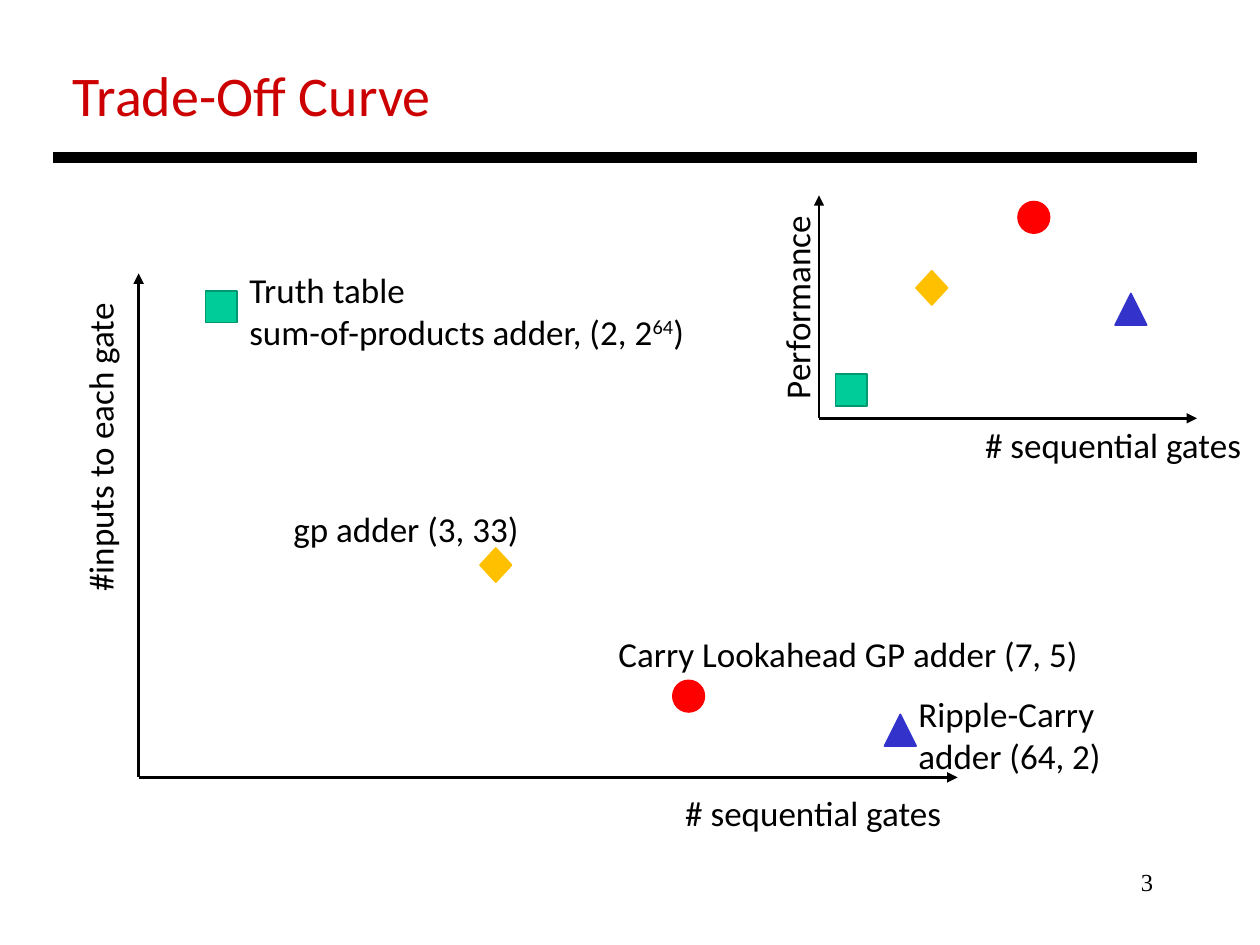
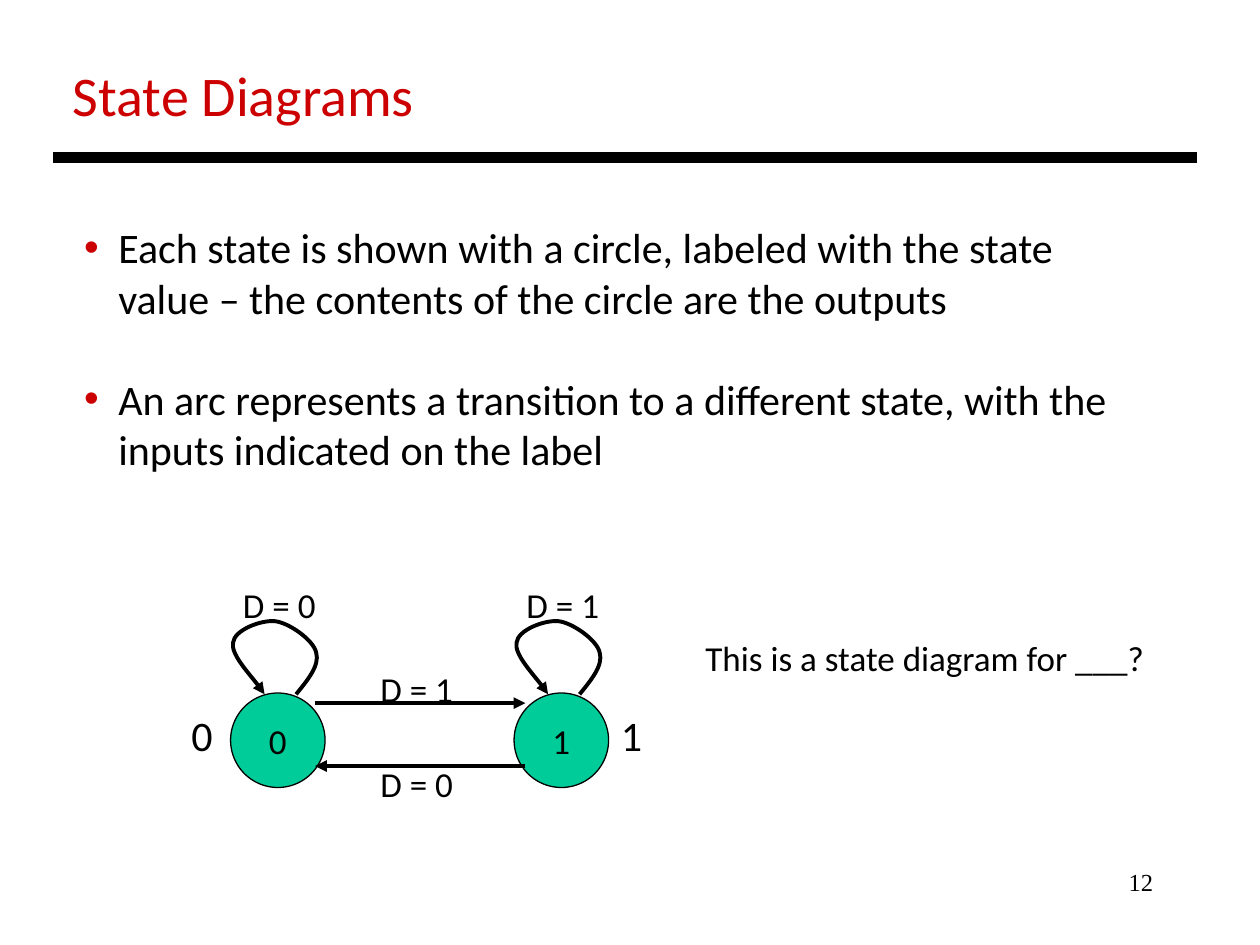
from lxml.etree import SubElement
from pptx import Presentation
from pptx.dml.color import RGBColor
from pptx.enum.shapes import MSO_CONNECTOR, MSO_SHAPE
from pptx.enum.text import MSO_ANCHOR, MSO_AUTO_SIZE, PP_ALIGN
from pptx.oxml.ns import qn
from pptx.util import Inches, Pt

BLACK, TITLE_RED, GREEN = "000000", "CC0000", "00CC99"
BODY_FONT, NUMBER_FONT = "Calibri", "Times New Roman"

# kind: preset shape, height, fill, line
MARKERS = {
    "truth table": (MSO_SHAPE.RECTANGLE, 0.25, GREEN, "009771"),
    "gp": (MSO_SHAPE.DIAMOND, 0.27, "FFC000", "FFC000"),
    "lookahead": (MSO_SHAPE.OVAL, 0.25, "FF0000", "FF0000"),
    "ripple": (MSO_SHAPE.ISOSCELES_TRIANGLE, 0.25, "3333CC", "3333CC"),
}

# Start point, then three points for each curve, from the state's top left corner
LOOP = [(0.52, 0.01),
        (0.61, -0.1), (0.71, -0.22), (0.68, -0.32),
        (0.66, -0.42), (0.46, -0.56), (0.35, -0.57),
        (0.24, -0.58), (0.03, -0.5), (0.02, -0.4),
        (0, -0.31), (0.23, -0.06), (0.27, 0.01)]


def color(hex_string):
    return RGBColor.from_string(hex_string)


class Deck:
    def __init__(self):
        self.prs = Presentation()
        self.prs.slide_width, self.prs.slide_height = Inches(10), Inches(7.5)
        self.slide = None

    def new_slide(self, title, number):
        self.slide = self.prs.slides.add_slide(self.prs.slide_layouts[6])
        self.text(0.48, 0.43, 3.08, 0.64, title, 32, TITLE_RED)
        self.line(0.42, 1.25, 9.5, 1.25, 6, arrow=False)
        sp = self.text(7.17, 6.83, 2.08, 0.5, str(number), 14,
                       font=NUMBER_FONT, wrap=True)
        sp.text_frame.paragraphs[0].alignment = PP_ALIGN.RIGHT

    def style(self, r, size, fill=BLACK, font=BODY_FONT):
        r.font.size, r.font.name = Pt(size), font
        r.font.color.rgb = color(fill)

    def text(self, x, y, w, h, text, size=20, fill=BLACK, font=BODY_FONT,
             wrap=False, rotation=0):
        sp = self.slide.shapes.add_textbox(Inches(x), Inches(y), Inches(w), Inches(h))
        sp.rotation = rotation
        tf = sp.text_frame
        tf.text = text
        tf.word_wrap = wrap
        if not wrap:
            tf.auto_size = MSO_AUTO_SIZE.SHAPE_TO_FIT_TEXT
        for p in tf.paragraphs:
            for r in p.runs:
                self.style(r, size, fill, font)
        return sp

    def add_power(self, sp, exponent, rest):
        """Append a raised exponent and the text after it to the last paragraph."""
        p = sp.text_frame.paragraphs[-1]
        for text, baseline in ((exponent, 30000), (rest, 0)):
            r = p.add_run()
            r.text = text
            self.style(r, 20)
            r.font._element.set("baseline", str(baseline))

    def bullets(self, x, y, w, h, items, size=24, gap=29):
        sp = self.text(x, y, w, h, "\n".join(items), size, wrap=True)
        for p in sp.text_frame.paragraphs:
            p.space_after = Pt(gap)
            pPr = p._p.get_or_add_pPr()
            indent = Inches(0.27)
            pPr.set("marL", str(indent))
            pPr.set("indent", str(-indent))
            clr = SubElement(pPr, qn("a:buClr"))
            SubElement(clr, qn("a:srgbClr"), val=TITLE_RED)
            SubElement(pPr, qn("a:buFont"), typeface="Arial")
            SubElement(pPr, qn("a:buChar"), char="•")

    def shape(self, kind, x, y, w, h, fill, line, weight):
        sp = self.slide.shapes.add_shape(kind, Inches(x), Inches(y), Inches(w), Inches(h))
        sp.shadow.inherit = False
        sp.fill.solid()
        sp.fill.fore_color.rgb = color(fill)
        sp.line.color.rgb = color(line)
        sp.line.width = Pt(weight)
        return sp

    def marker(self, kind, x, y):
        preset, height, fill, line = MARKERS[kind]
        self.shape(preset, x, y, 0.25, height, fill, line, 1)

    def stroke(self, sp, weight, arrow=True):
        sp.line.color.rgb = color(BLACK)
        sp.line.width = Pt(weight)
        if arrow:
            SubElement(sp.line._get_or_add_ln(), qn("a:tailEnd"), type="triangle")

    def line(self, x1, y1, x2, y2, weight, arrow=True):
        sp = self.slide.shapes.add_connector(
            MSO_CONNECTOR.STRAIGHT, Inches(x1), Inches(y1), Inches(x2), Inches(y2))
        self.stroke(sp, weight, arrow)
        SubElement(sp._element.spPr, qn("a:effectLst"))

    def axes(self, x, y, right, top):
        self.line(x, y, right, y, 1.5)
        self.line(x, y, x, top, 1.5)

    def loop(self, x, y):
        """Draw the curved arrow from a state back to itself."""
        points = [(Inches(x + dx), Inches(y + dy)) for dx, dy in LOOP]
        builder = self.slide.shapes.build_freeform(*points[0])
        builder.add_line_segments(points[1:], close=False)
        sp = builder.convert_to_shape()
        sp.shadow.inherit = False
        sp.fill.background()
        self.stroke(sp, 2.25)
        # Turn every three straight segments into one cubic curve
        segments = sp._element.xpath(".//a:lnTo")
        for i in range(0, len(segments), 3):
            curve = SubElement(segments[i].getparent(), qn("a:cubicBezTo"))
            for segment in segments[i:i + 3]:
                curve.append(segment[0])
                segment.getparent().remove(segment)

    def state(self, x, y, value, loop_label, name_x):
        sp = self.shape(MSO_SHAPE.OVAL, x, y, 0.75, 0.75, GREEN, BLACK, 0.75)
        tf = sp.text_frame
        tf.text = value
        tf.word_wrap = False
        tf.vertical_anchor = MSO_ANCHOR.MIDDLE
        p = tf.paragraphs[0]
        p.alignment = PP_ALIGN.CENTER
        self.style(p.runs[0], 20)
        self.text(name_x, y + 0.08, 0.37, 0.5, value, 24)
        self.loop(x, y)
        self.text(x, y - 0.92, 0.78, 0.44, loop_label)


def trade_off_curve(deck):
    deck.new_slide("Trade-Off Curve", 3)

    deck.axes(1.1, 6.17, 7.6, 2.17)
    deck.text(-0.46, 3.32, 2.51, 0.44, "#inputs to each gate", rotation=270)
    deck.text(5.34, 6.23, 2.26, 0.44, "# sequential gates")
    for kind, x, y in (("truth table", 1.63, 2.31), ("ripple", 7.02, 5.67),
                       ("lookahead", 5.34, 5.4), ("gp", 3.81, 4.35)):
        deck.marker(kind, x, y)
    sp = deck.text(1.88, 2.08, 3.71, 0.77, "Truth table\nsum-of-products adder, (2, 2")
    deck.add_power(sp, "64", ")")
    deck.text(2.23, 3.98, 2.01, 0.44, "gp adder (3, 33)")
    deck.text(4.81, 4.97, 3.88, 0.44, "Carry Lookahead GP adder (7, 5)")
    deck.text(7.19, 5.45, 1.66, 0.77, "Ripple-Carry\nadder (64, 2)")

    deck.axes(6.5, 3.32, 9.5, 1.55)
    deck.text(7.72, 3.31, 2.26, 0.44, "# sequential gates")
    deck.text(5.49, 2.21, 1.67, 0.44, "Performance", rotation=270)
    for kind, x, y in (("truth table", 6.63, 2.97), ("gp", 7.27, 2.15),
                       ("lookahead", 8.08, 1.6), ("ripple", 8.85, 2.33)):
        deck.marker(kind, x, y)


def state_diagrams(deck):
    deck.new_slide("State Diagrams", 12)
    deck.bullets(0.57, 1.71, 8.45, 2.12, [
        "Each state is shown with a circle, labeled with the state value"
        " – the contents of the circle are the outputs",
        "An arc represents a transition to a different state, with the"
        " inputs indicated on the label",
    ])
    deck.state(1.83, 5.5, "0", "D = 0", name_x=1.42)
    deck.state(4.08, 5.5, "1", "D = 1", name_x=4.83)
    deck.line(2.5, 5.58, 4.17, 5.58, 2.25)
    deck.line(4.17, 6.08, 2.5, 6.08, 2.25)
    deck.text(2.92, 5.25, 0.78, 0.44, "D = 1")
    deck.text(2.92, 6, 0.78, 0.44, "D = 0")
    deck.text(5.5, 5, 3.72, 0.44, "This is a state diagram for ___?")


def main():
    deck = Deck()
    trade_off_curve(deck)
    state_diagrams(deck)
    deck.prs.save("out.pptx")


if __name__ == "__main__":
    main()
